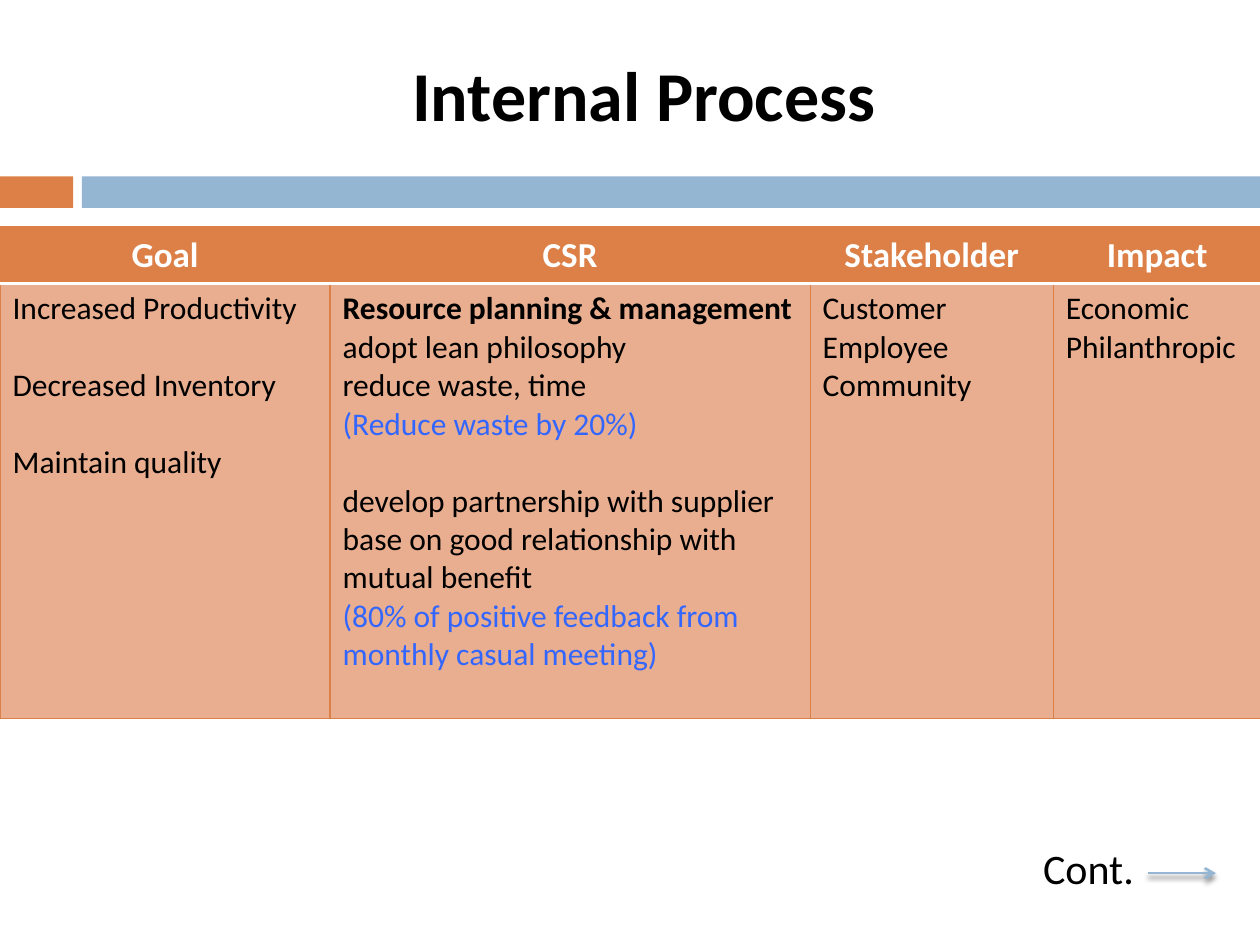
"""Build the Internal Process slide with its goal table and continuation arrow."""
from dataclasses import dataclass

from lxml import etree
from pptx import Presentation
from pptx import util as u
from pptx.dml.color import RGBColor
from pptx.enum import shapes, text
from pptx.oxml import parse_xml
from pptx.oxml.ns import qn


@dataclass(frozen=True)
class Theme:
    font: str = "Calibri"
    orange: str = "DD8047"
    peach: str = "E8AE8F"
    blue: str = "94B6D2"
    link: str = "3366FF"
    black: str = "000000"
    white: str = "FFFFFF"
    title: int = 40
    footer: int = 24
    header: int = 20
    body: int = 18
    blank_line: int = 22
    thin: float = 0.79
    thick: float = 1.5


theme = Theme()


def grid(*cells):
    """Turn counts of tenth-inch grid cells into lengths."""
    return [u.Inches(cell / 10) for cell in cells]


def write(paragraph, words, size, color=theme.black, bold=False):
    """Fill a paragraph with words in one style."""
    paragraph.text = words
    font = paragraph.font
    font.name, font.size, font.bold = theme.font, u.Pt(size), bold
    font.color.rgb = RGBColor.from_string(color)


presentation = Presentation()
presentation.slide_width, presentation.slide_height = grid(100, 75)
slide = presentation.slides.add_slide(presentation.slide_layouts[6])

for left, width, color in [(0, 5.8, theme.orange), (6.5, 93.5, theme.blue)]:
    bar = slide.shapes.add_shape(shapes.MSO_SHAPE.RECTANGLE, *grid(left, 14, width, 2.5))
    bar.shadow.inherit = False
    bar.fill.solid()
    bar.fill.fore_color.rgb = RGBColor.from_string(color)
    bar.line.fill.background()

columns = [
    ("Goal", 26.2, [
        ("Increased Productivity", "plain"),
        ("Decreased Inventory", "spaced"),
        ("Maintain quality", "spaced"),
    ]),
    ("CSR", 38.1, [
        ("Resource planning & management", "bold"),
        ("adopt lean philosophy", "plain"),
        ("reduce waste, time", "plain"),
        ("(Reduce waste by 20%)", "target"),
        ("develop partnership with supplier base on good relationship with mutual benefit", "spaced"),
        ("(80% of positive feedback from monthly casual meeting)", "target"),
    ]),
    ("Stakeholder", 19.3, [("Customer", "plain"), ("Employee", "plain"), ("Community", "plain")]),
    ("Impact", 16.5, [("Economic", "plain"), ("Philanthropic", "plain")]),
]
table = slide.shapes.add_table(2, len(columns), *grid(0, 18, 100, 39)).table
for row, height in zip(table.rows, grid(4.5, 34.5)):
    row.height = height

for index, (heading, width, lines) in enumerate(columns):
    table.columns[index].width = grid(width)[0]

    header = table.cell(0, index)
    header.vertical_anchor = text.MSO_ANCHOR.MIDDLE
    paragraph = header.text_frame.paragraphs[0]
    paragraph.alignment = text.PP_ALIGN.CENTER
    write(paragraph, heading, theme.header, theme.white, True)

    body = table.cell(1, index)
    for number, (words, style) in enumerate(lines):
        frame = body.text_frame
        paragraph = frame.add_paragraph() if number else frame.paragraphs[0]
        color = theme.link if style == "target" else theme.black
        write(paragraph, words, theme.body, color, style == "bold")
        if style == "spaced":
            paragraph.space_before = u.Pt(theme.blank_line)

    for cell, fill, divider in [(header, theme.orange, "lnB"), (body, theme.peach, "lnT")]:
        properties = cell._tc.get_or_add_tcPr()
        for side in ("lnL", "lnR", "lnT", "lnB"):
            color, weight = (theme.white, theme.thick) if side == divider else (theme.orange, theme.thin)
            border = etree.SubElement(properties, qn(f"a:{side}"), w=str(u.Pt(weight)))
            solid = etree.SubElement(border, qn("a:solidFill"))
            etree.SubElement(solid, qn("a:srgbClr"), val=color)
        cell.fill.solid()
        cell.fill.fore_color.rgb = RGBColor.from_string(fill)

for words, place, size, bold, alignment in [
    ("Internal Process", (17.1, 3.6, 68, 10.8), theme.title, True, text.PP_ALIGN.CENTER),
    ("Cont.", (81.8, 66.4, 9.3, 5), theme.footer, False, text.PP_ALIGN.LEFT),
]:
    frame = slide.shapes.add_textbox(*grid(*place)).text_frame
    frame.word_wrap = True
    frame.paragraphs[0].alignment = alignment
    write(frame.paragraphs[0], words, size, bold=bold)

arrow = slide.shapes.add_connector(shapes.MSO_CONNECTOR.STRAIGHT, *grid(91.1, 69.3, 96.5, 69.3))
arrow.line.color.rgb = RGBColor.from_string(theme.blue)
arrow.line.width = u.Pt(theme.thick)
etree.SubElement(arrow.line._get_or_add_ln(), qn("a:tailEnd"), type="arrow")
arrow._element.spPr.append(parse_xml(
    '<a:effectLst xmlns:a="http://schemas.openxmlformats.org/drawingml/2006/main">'
    f'<a:outerShdw blurRad="{u.Pt(3)}" dist="{u.Pt(2.4)}" dir="5400000" rotWithShape="0">'
    f'<a:srgbClr val="{theme.black}"><a:alpha val="45000"/></a:srgbClr>'
    '</a:outerShdw></a:effectLst>'
))

presentation.save("out.pptx")
